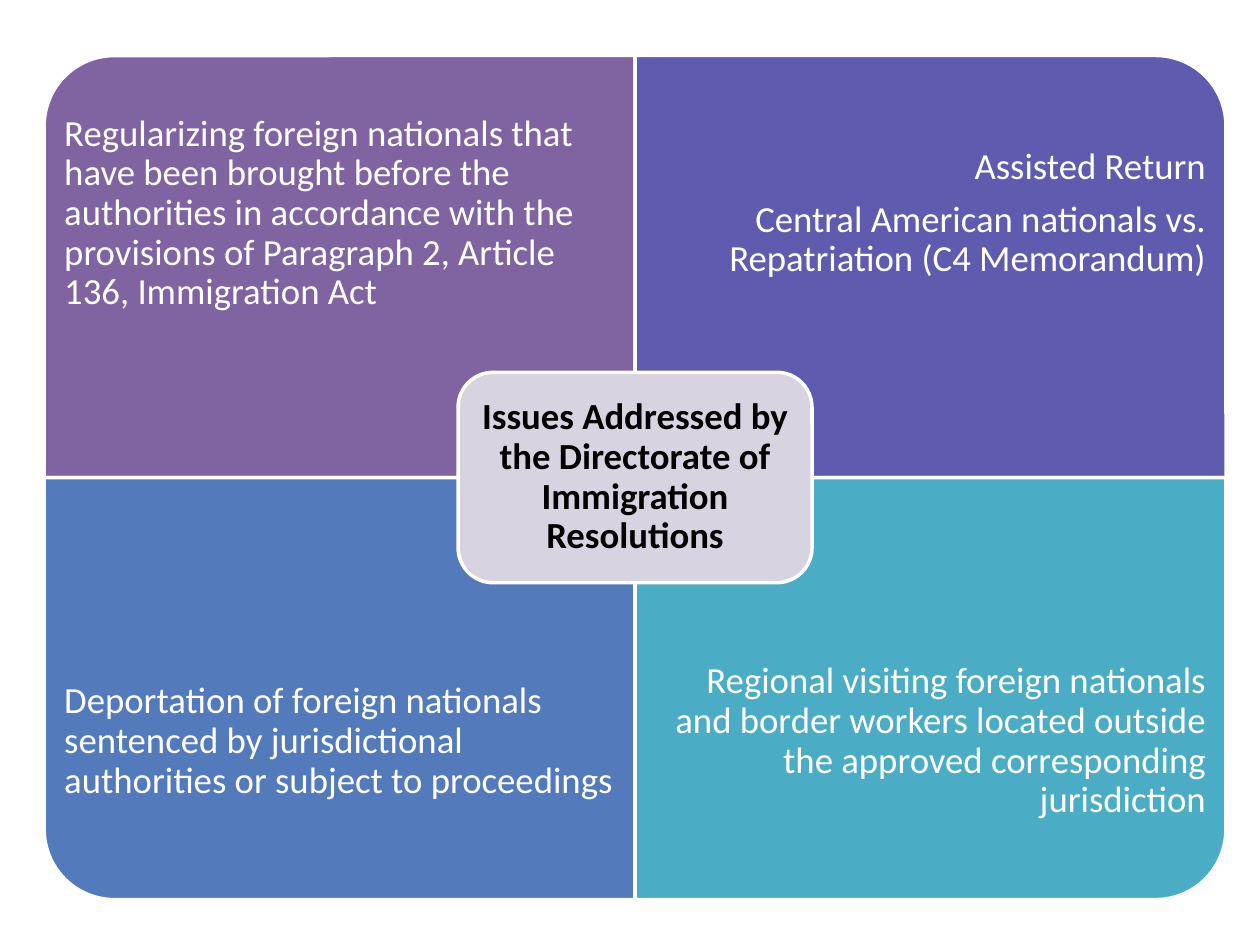
from pptx import Presentation
from pptx.dml.color import RGBColor
from pptx.enum.shapes import MSO_SHAPE as SHAPE
from pptx.enum.text import MSO_ANCHOR as ANCHOR, PP_ALIGN as ALIGN
from pptx.util import Inches, Pt

LEFT, TOP = 0.35, 0.44
WIDTH, HEIGHT = 4.69, 3.35
TEXT_HEIGHT = 2.51

# column, row, rotation, fill, paragraphs
QUADRANTS = [
    (0, 0, 270, "8064A2", [
        "Regularizing foreign nationals that have been brought before the "
        "authorities in accordance with the provisions of Paragraph 2, "
        "Article 136, Immigration Act"]),
    (1, 0, 0, "5F5BAE", [
        "Assisted Return",
        "Central American nationals vs. Repatriation (C4 Memorandum)"]),
    (0, 1, 180, "537ABA", [
        "Deportation of foreign nationals sentenced by jurisdictional "
        "authorities or subject to proceedings"]),
    (1, 1, 90, "4BACC6", [
        "Regional visiting foreign nationals and border workers located "
        "outside the approved corresponding jurisdiction"]),
]
CENTER_TEXT = "Issues Addressed by the Directorate of Immigration Resolutions"


def rgb(hex_color):
    return RGBColor.from_string(hex_color)


class MatrixSlide:
    font_name = "Calibri"
    font_size = Pt(21)
    white, black = "FFFFFF", "000000"

    def __init__(self, slide):
        self.slide = slide

    def panel(self, kind, left, top, width, height, fill, rotation=0):
        """Draw a white-edged shape that covers the given box once rotated."""
        if rotation % 180:
            left += (width - height) / 2
            top += (height - width) / 2
            width, height = height, width
        panel = self.slide.shapes.add_shape(
            kind, Inches(left), Inches(top), Inches(width), Inches(height))
        panel.rotation = rotation
        panel.shadow.inherit = False
        panel.fill.solid()
        panel.fill.fore_color.rgb = rgb(fill)
        panel.line.color.rgb = rgb(self.white)
        panel.line.width = Pt(2)

    def label(self, left, top, width, height, paragraphs, align, inset,
              color=white, bold=False):
        box = self.slide.shapes.add_textbox(
            Inches(left), Inches(top), Inches(width), Inches(height))
        frame = box.text_frame
        frame.word_wrap = True
        frame.vertical_anchor = ANCHOR.MIDDLE
        frame.margin_left = frame.margin_right = Inches(inset)
        frame.margin_top = frame.margin_bottom = Inches(inset)
        frame.text = "\n".join(paragraphs)
        for paragraph in frame.paragraphs:
            paragraph.alignment = align
            paragraph.line_spacing = 0.9
            paragraph.space_after = Pt(7.5)
            for run in paragraph.runs:
                run.font.name = self.font_name
                run.font.size = self.font_size
                run.font.bold = bold
                run.font.color.rgb = rgb(color)

    def quadrant(self, column, row, rotation, fill, paragraphs):
        left, top = LEFT + column * WIDTH, TOP + row * HEIGHT
        self.panel(SHAPE.ROUND_1_RECTANGLE, left, top, WIDTH, HEIGHT,
                   fill, rotation)
        text_top = top + row * (HEIGHT - TEXT_HEIGHT)
        align = ALIGN.RIGHT if column else ALIGN.LEFT
        self.label(left, text_top, WIDTH, TEXT_HEIGHT, paragraphs, align, 0.16)

    def center(self, text):
        width, height, pad = 2.81, 1.67, 0.08
        left = LEFT + WIDTH - width / 2
        top = TOP + HEIGHT - height / 2
        self.panel(SHAPE.ROUNDED_RECTANGLE, left, top, width, height, "D8D3E0")
        self.label(left + pad, top + pad, width - 2 * pad, height - 2 * pad,
                   [text], ALIGN.CENTER, 0.09, self.black, bold=True)


def main():
    deck = Presentation()
    deck.slide_width, deck.slide_height = Inches(10), Inches(7.5)
    matrix = MatrixSlide(deck.slides.add_slide(deck.slide_layouts[6]))
    for quadrant in QUADRANTS:
        matrix.quadrant(*quadrant)
    matrix.center(CENTER_TEXT)
    deck.save("out.pptx")


if __name__ == "__main__":
    main()
